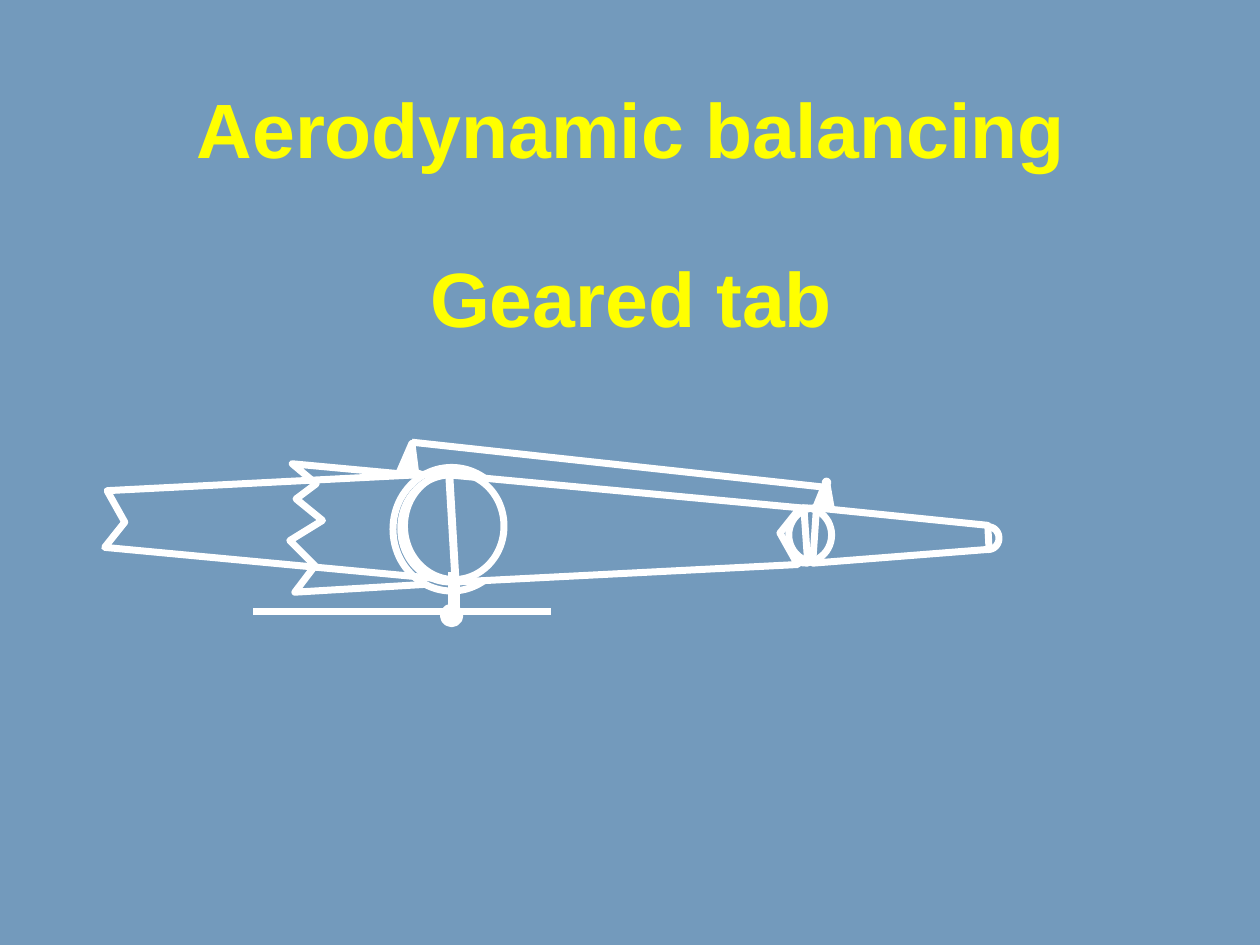
from dataclasses import dataclass
from typing import Optional, Union

from lxml import etree
from pptx import Presentation
from pptx.dml.color import RGBColor
from pptx.enum.shapes import MSO_CONNECTOR, MSO_SHAPE
from pptx.enum.text import MSO_ANCHOR, PP_ALIGN
from pptx.oxml.ns import qn
from pptx.util import Pt

STRAIGHT = MSO_CONNECTOR.STRAIGHT
OVAL = MSO_SHAPE.OVAL
MIDDLE = MSO_ANCHOR.MIDDLE
CENTER = PP_ALIGN.CENTER


@dataclass(frozen=True)
class Theme:
    back: str = "739ABC"
    line: str = "FFFFFF"
    pivot: str = "002F5F"
    title: str = "FFFF00"
    font: str = "Arial"
    title_size: float = 44
    line_width: float = 4


THEME = Theme()
Point = tuple[float, float]


@dataclass(frozen=True)
class Line:
    start: Point
    end: Point


@dataclass(frozen=True)
class Oval:
    x: float
    y: float
    w: float
    h: float
    fill: Optional[str] = None


@dataclass(frozen=True)
class Outline:
    points: list[Point]
    fill: Optional[str] = None


Part = Union[Line, Oval, Outline]


def rgb(value: str) -> RGBColor:
    return RGBColor.from_string(value)


def set_text(tf, text: str, *, size: float, color: str, bold: bool = False,
             align=CENTER, spacing: float = 1.0, gap: float = 0) -> None:
    for i, content in enumerate(text.split("\n")):
        p = tf.add_paragraph() if i else tf.paragraphs[0]
        p.alignment = align
        p.line_spacing = spacing
        p.space_before = Pt(gap if i else 0)
        r = p.add_run()
        r.text = content
        r.font.name = THEME.font
        r.font.size = Pt(size)
        r.font.bold = bold
        r.font.color.rgb = rgb(color)


def set_stroke(sp) -> None:
    sp.line.color.rgb = rgb(THEME.line)
    sp.line.width = Pt(THEME.line_width)


def set_style(sp, fill: Optional[str]) -> None:
    sp.shadow.inherit = False
    set_stroke(sp)
    if fill:
        sp.fill.solid()
        sp.fill.fore_color.rgb = rgb(fill)
    else:
        sp.fill.background()


def draw_line(s, line: Line) -> None:
    ends = [Pt(v) for v in (*line.start, *line.end)]
    sp = s.shapes.add_connector(STRAIGHT, *ends)
    set_stroke(sp)
    etree.SubElement(sp.element.spPr, qn("a:effectLst"))


def draw_oval(s, oval: Oval) -> None:
    box = [Pt(v) for v in (oval.x, oval.y, oval.w, oval.h)]
    set_style(s.shapes.add_shape(OVAL, *box), oval.fill)


def draw_outline(s, outline: Outline) -> None:
    first, *rest = [(Pt(x), Pt(y)) for x, y in outline.points]
    builder = s.shapes.build_freeform(*first)
    builder.add_line_segments(rest, close=True)
    set_style(builder.convert_to_shape(), outline.fill)


def draw(s, part: Part) -> None:
    if isinstance(part, Line):
        draw_line(s, part)
    elif isinstance(part, Oval):
        draw_oval(s, part)
    else:
        draw_outline(s, part)


def mirror(points: list[Point], center_x: float) -> list[Point]:
    return [(2 * center_x - x, y) for x, y in points]


def half_turn(points: list[Point], center: Point) -> list[Point]:
    return [(2 * center[0] - x, 2 * center[1] - y) for x, y in points]


def linkage() -> list[Part]:
    back, white, pivot = THEME.back, THEME.line, THEME.pivot
    stub = [(167, 265), (242, 272), (242, 334), (168.5, 338.4),
            (180, 323.3), (165.6, 308.9), (184.3, 297.4),
            (169.2, 285.1), (180.7, 276.5)]
    horn = [(235.4, 253.4), (228.2, 270), (237.6, 270.7)]
    tab_horn = [(472.3, 275), (465.8, 290.9), (475.2, 291.6)]
    tab = [(564.5, 300.2), (466.6, 290.2), (464.4, 321.8), (565.2, 313.9)]
    elevator = [(257, 271.4), (457.2, 290.2), (445.7, 304.6),
                (455.8, 322.6), (260.6, 332.6)]
    return [
        Line((314.6, 349.2), (144.7, 349.2)),
        Outline(stub, back),
        Oval(224.6, 267.1, 67, 70.6, back),
        Line((241.9, 271.4), (237.6, 270)),
        Line((229.7, 267.1), (236.2, 267.1)),
        Outline(horn, white),
        Oval(234, 257, 1.4, 1.4, pivot),
        Line((235.4, 252.7), (473, 278.6)),
        Outline(tab_horn, white),
        Oval(471.6, 275, 1.4, 1.4, pivot),
        Oval(558.7, 301, 12.2, 13, back),
        Oval(450.7, 290.2, 30.2, 31, back),
        Outline(tab, back),
        Oval(445, 290.2, 30.2, 31),
        Outline(mirror(tab, 463)),
        Line((260.6, 301.7), (260.6, 353.5)),
        Oval(253.4, 347, 9.4, 9.4, white),
        Oval(229, 271.4, 56.9, 61.2, back),
        Outline(elevator, back),
        Oval(231.1, 270, 56.9, 61.2),
        Outline(half_turn(elevator, (258.5, 301.5))),
        Line((257.8, 326.9), (257.8, 349.2)),
    ]


def add_title(s) -> None:
    sp = s.shapes.title
    sp.left, sp.top, sp.width, sp.height = Pt(103), Pt(49), Pt(515.5), Pt(151.2)
    tf = sp.text_frame
    tf.word_wrap = False
    tf.vertical_anchor = MIDDLE
    set_text(tf, "Aerodynamic balancing\nGeared tab", size=THEME.title_size,
             color=THEME.title, bold=True, spacing=0.9, gap=49.4)


def main() -> None:
    prs = Presentation()
    prs.slide_width, prs.slide_height = Pt(720), Pt(540)
    s = prs.slides.add_slide(prs.slide_layouts[0])
    s.background.fill.solid()
    s.background.fill.fore_color.rgb = rgb(THEME.back)
    subtitle = s.placeholders[1].element
    subtitle.getparent().remove(subtitle)
    add_title(s)
    for part in linkage():
        draw(s, part)
    prs.save("out.pptx")


if __name__ == "__main__":
    main()
